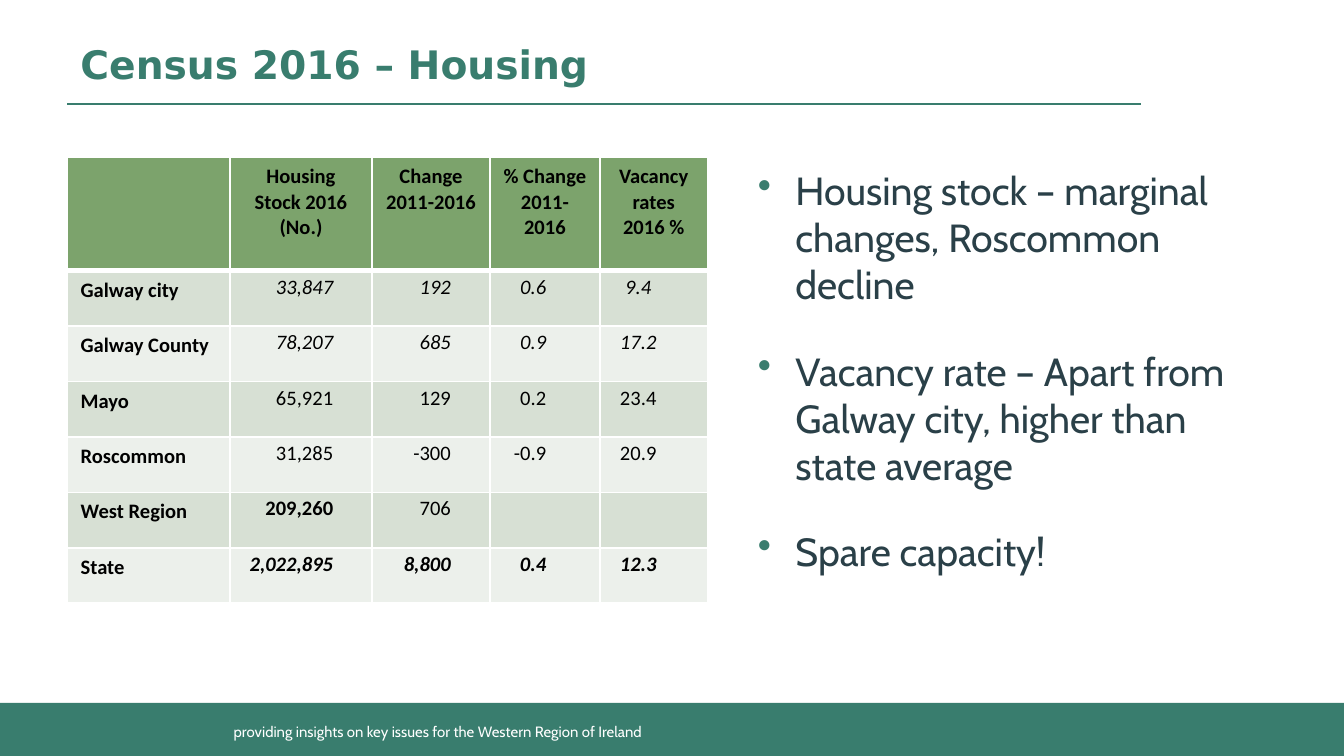
import pptx
import pptx.dml.color
import pptx.enum.shapes
import pptx.enum.text
import pptx.oxml
import pptx.oxml.ns
import pptx.util
from lxml import etree

RGB = pptx.dml.color.RGBColor
TEAL = RGB(0x39, 0x7D, 0x6E)
SLATE = RGB(0x2A, 0x40, 0x48)
GREEN = RGB(0x7C, 0xA3, 0x6C)
BANDS = (RGB(0xD7, 0xE0, 0xD4), RGB(0xEC, 0xF0, 0xEB))
WHITE = RGB(0xFF, 0xFF, 0xFF)
BLACK = RGB(0, 0, 0)
ALIGN = pptx.enum.text.PP_ALIGN
ANCHOR = pptx.enum.text.MSO_ANCHOR

HEADINGS = ("", "Housing Stock 2016 (No.)", "Change 2011-2016",
            "% Change 2011-2016", "Vacancy rates 2016 %")
AREAS = (
    ("Galway city", ("33,847", "192", "0.6", "9.4"), ("italic",) * 4),
    ("Galway County", ("78,207", "685", "0.9", "17.2"), ("italic",) * 4),
    ("Mayo", ("65,921", "129", "0.2", "23.4"), ("",) * 4),
    ("Roscommon", ("31,285", "-300", "-0.9", "20.9"), ("",) * 4),
    ("West Region", ("209,260", "706", "", ""), ("bold", "", "", "")),
    ("State", ("2,022,895", "8,800", "0.4", "12.3"), ("bold italic",) * 4),
)
FIGURE_ALIGN = (ALIGN.RIGHT, ALIGN.RIGHT, ALIGN.RIGHT, ALIGN.CENTER)
FIGURE_MARGIN = (2.9, 2.9, 4, 3)
POINTS = ("Housing stock – marginal changes, Roscommon decline",
          "Vacancy rate – Apart from Galway city, higher than state average",
          "Spare capacity!")


class Deck:
    """Slide style on a grid whose columns and rows are a tenth of an inch."""

    def __init__(self, columns, rows):
        self.presentation = pptx.Presentation()
        self.presentation.slide_width = self.grid(columns)
        self.presentation.slide_height = self.grid(rows)
        self.slide = self.presentation.slides.add_slide(self.presentation.slide_layouts[6])

    def grid(self, units):
        return pptx.util.Inches(units / 10)

    def place(self, *units):
        return [self.grid(unit) for unit in units]

    def add_text(self, paragraph, text, size, font, colour, bold=False, italic=False):
        run = paragraph.add_run()
        run.text = text
        run.font.size = pptx.util.Pt(size)
        run.font.name = font
        run.font.bold = bold
        run.font.italic = italic
        run.font.color.rgb = colour

    def band(self, area, colour):
        band = self.slide.shapes.add_shape(
            pptx.enum.shapes.MSO_SHAPE.RECTANGLE, *self.place(*area))
        band.shadow.inherit = False
        band.fill.solid()
        band.fill.fore_color.rgb = colour
        band.line.fill.background()

    def rule(self, ends, colour):
        rule = self.slide.shapes.add_connector(
            pptx.enum.shapes.MSO_CONNECTOR.STRAIGHT, *self.place(*ends))
        rule.line.color.rgb = colour
        rule.line.width = pptx.util.Pt(1)
        properties = rule.element.find(pptx.oxml.ns.qn("p:spPr"))
        etree.SubElement(properties, pptx.oxml.ns.qn("a:effectLst"))

    def frame(self, area, anchor=ANCHOR.TOP):
        frame = self.slide.shapes.add_textbox(*self.place(*area)).text_frame
        frame.word_wrap = True
        frame.vertical_anchor = anchor
        return frame

    def label(self, area, text, size, font, colour, bold=False, anchor=ANCHOR.TOP):
        self.add_text(self.frame(area, anchor).paragraphs[0], text, size, font, colour, bold)

    def bullets(self, area, points, size, font, colour, bullet_colour):
        frame = self.frame(area)
        for index, point in enumerate(points):
            paragraph = frame.add_paragraph() if index else frame.paragraphs[0]
            properties = paragraph._p.get_or_add_pPr()
            properties.set("marL", str(self.grid(2.8)))
            properties.set("indent", str(self.grid(-2.8)))
            tint = etree.SubElement(properties, pptx.oxml.ns.qn("a:buClr"))
            etree.SubElement(tint, pptx.oxml.ns.qn("a:srgbClr"), val=str(bullet_colour))
            etree.SubElement(properties, pptx.oxml.ns.qn("a:buChar"), char="•")
            if index:
                paragraph.space_before = pptx.util.Pt(size)
            self.add_text(paragraph, point, size, font, colour)

    def cell(self, cell, text, fill, borders, align=ALIGN.LEFT, bold=False,
             italic=False, margin=None):
        properties = cell._tc.get_or_add_tcPr()
        for side, width in zip("LRTB", borders):
            edge = etree.SubElement(properties, pptx.oxml.ns.qn(f"a:ln{side}"),
                                    w=str(pptx.util.Pt(width)))
            paint = etree.SubElement(edge, pptx.oxml.ns.qn("a:solidFill"))
            etree.SubElement(paint, pptx.oxml.ns.qn("a:srgbClr"), val=str(WHITE))
        cell.fill.solid()
        cell.fill.fore_color.rgb = fill
        paragraph = cell.text_frame.paragraphs[0]
        paragraph.alignment = align
        if margin is not None:
            cell.margin_left, cell.margin_right = self.place(0.7, margin)
            cell.margin_top = cell.margin_bottom = 0
            paragraph.line_spacing = 1.15
        if text:
            self.add_text(paragraph, text, 11, "Calibri", BLACK, bold, italic)
        else:
            paragraph.font.size = pptx.util.Pt(11)

    def table(self, area, widths, header_height, headings, areas):
        table = self.slide.shapes.add_table(
            len(areas) + 1, len(headings), *self.place(*area)).table
        table.first_row = table.horz_banding = False
        for column, width in zip(table.columns, widths):
            column.width = self.grid(width)
        area_height = (area[3] - header_height) / len(areas)
        for index, row in enumerate(table.rows):
            row.height = self.grid(area_height if index else header_height)
        for column, heading in enumerate(headings):
            self.cell(table.cell(0, column), heading, GREEN, (1, 1, 1, 3),
                      ALIGN.CENTER, bold=True)
        for row, (name, figures, styles) in enumerate(areas, 1):
            fill = BANDS[(row - 1) % 2]
            borders = (1, 1, 3 if row == 1 else 1, 1)
            self.cell(table.cell(row, 0), name, fill, borders, bold=True)
            columns = zip(figures, styles, FIGURE_ALIGN, FIGURE_MARGIN)
            for column, (figure, style, align, margin) in enumerate(columns, 1):
                self.cell(table.cell(row, column), figure, fill, borders, align,
                          "bold" in style, "italic" in style, margin)


def main():
    deck = Deck(100, 56.25)
    deck.band((0, 52.3, 100, 3.95), TEAL)
    deck.label((16.4, 53.3, 43.1, 2.4),
               "providing insights on key issues for the Western Region of Ireland",
               8, "Cabin", WHITE)
    deck.rule((5, 7.75, 84.9, 7.75), TEAL)
    deck.bullets((55.4, 11.9, 39.6, 35.3), POINTS, 21, "Cabin", SLATE, TEAL)
    deck.label((5, 2.5, 79.9, 4.5), "Census 2016 – Housing", 21, "DejaVu Sans",
               TEAL, bold=True, anchor=ANCHOR.MIDDLE)
    deck.table((5, 11.7, 47.7, 33.2), (12.1, 10.6, 8.75, 8.2, 8), 8.45, HEADINGS, AREAS)
    deck.presentation.save("out.pptx")


if __name__ == "__main__":
    main()
